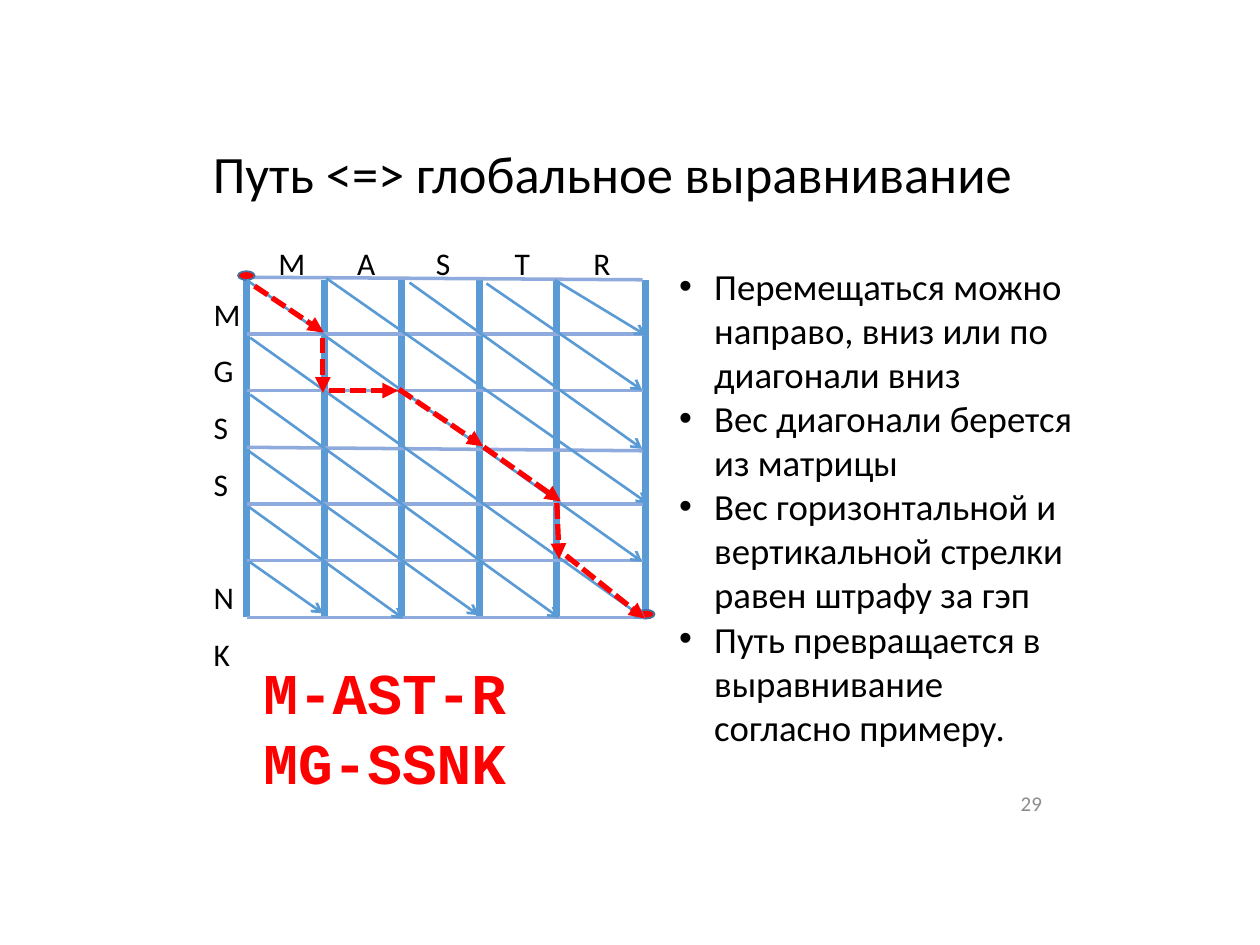
import pptx
import pptx.dml.color
import pptx.enum.dml
import pptx.enum.shapes
import pptx.enum.text
import pptx.oxml
import pptx.oxml.ns
import pptx.util

Pt = pptx.util.Pt
ALIGN = pptx.enum.text.PP_ALIGN
ANCHOR = pptx.enum.text.MSO_ANCHOR

BLACK, RED, BLUE, PALE_BLUE = "000000", "FF0000", "5B9BD5", "8FAADC"

TITLE = "Путь <=> глобальное выравнивание"
PAGE_NUMBER = "29"
COLUMN_LETTERS = ["M", "A", "S", "T", "R"]
ROW_LETTERS = ["M", "GS", "S", "N", "K"]
ALIGNMENT = ["M-AST-R", "MG-SSNK"]
RULES = [
    "Перемещаться можно направо, вниз или по диагонали вниз",
    "Вес диагонали берется из матрицы",
    "Вес горизонтальной и вертикальной стрелки равен штрафу за гэп",
    "Путь превращается в выравнивание согласно примеру.",
]

# Grid in points: five even columns, then a wider last one
LEFT, TOP, BOTTOM, RIGHT = 141, 158.4, 352.8, 367.2
COLUMN_STEP, ROW_STEP = 44.3, 32.4
COLUMNS = [LEFT + COLUMN_STEP * i for i in range(5)] + [368.6]
ROWS = [TOP + ROW_STEP * i for i in range(7)]
ROW_TILT = {0: 1.5, 3: 2}
LETTER_STEP = 45

# Arrows: x and y of the start, x and y of the end
DIAGONALS = [
    (141, 160, 367, 321),
    (143, 193, 369, 354),
    (143, 225.5, 319.5, 353),
    (142.5, 258, 273.5, 351.5),
    (234, 161.5, 367, 256.5),
    (142, 289.5, 230.5, 353.5),
    (278, 162, 367, 223),
    (317, 160, 369, 191.5),
    (142.5, 321, 184.5, 350.5),
    (186.5, 159, 370, 287.5),
]
PATH = [
    (145.5, 163.5, 185, 190),
    (184.5, 193, 184.5, 224.5),
    (188, 223.2, 227.5, 223.2),
    (228, 222.5, 276, 255),
    (276.5, 255.5, 320.5, 286.5),
    (318.2, 287.5, 319.5, 319.5),
    (323.5, 317.5, 368.5, 353.5),
]
ENDPOINTS = [(136, 155), (364.5, 348.5)]

deck = pptx.Presentation()
deck.slide_width, deck.slide_height = Pt(720), Pt(540)
slide = deck.slides.add_slide(deck.slide_layouts[6])
shapes = slide.shapes


def rgb(value):
    return pptx.dml.color.RGBColor.from_string(value)


def add_child(parent, tag, **attributes):
    child = pptx.oxml.parse_xml(f"<a:{tag} {pptx.oxml.ns.nsdecls('a')}/>")
    for key, value in attributes.items():
        child.set(key, str(value))
    parent.append(child)
    return child


def add_line(x1, y1, x2, y2, color, width, head=None, dashed=False):
    connector = shapes.add_connector(
        pptx.enum.shapes.MSO_CONNECTOR.STRAIGHT, Pt(x1), Pt(y1), Pt(x2), Pt(y2))
    connector.line.color.rgb = rgb(color)
    connector.line.width = Pt(width)
    if dashed:
        connector.line.dash_style = pptx.enum.dml.MSO_LINE.SQUARE_DOT
    if head:
        add_child(connector.line._get_or_add_ln(), "tailEnd", type=head)
    add_child(connector._element.spPr, "effectLst")


def add_text(box, lines, size, color=BLACK, font="Calibri", bold=False,
             align=ALIGN.LEFT, anchor=ANCHOR.TOP, spacing=None):
    """Add a text box with one paragraph a line; return its paragraphs."""
    frame = shapes.add_textbox(*map(Pt, box)).text_frame
    frame.word_wrap = True
    frame.vertical_anchor = anchor
    for i, line in enumerate(lines):
        paragraph = frame.add_paragraph() if i else frame.paragraphs[0]
        paragraph.alignment = align
        if spacing:
            paragraph.line_spacing = spacing
        run = paragraph.add_run()
        run.text = line
        run.font.name, run.font.size, run.font.bold = font, Pt(size), bold
        run.font.color.rgb = rgb(color)
    return frame.paragraphs


add_text((114.5, 79, 495, 44), [TITLE], 30, anchor=ANCHOR.MIDDLE, spacing=0.9)
add_text((476.5, 448, 126, 21.5), [PAGE_NUMBER], 12, "8C8C8C",
         align=ALIGN.RIGHT, anchor=ANCHOR.MIDDLE)

for x in COLUMNS:
    add_line(x, 160, x, BOTTOM, BLUE, 4)
for i, y in enumerate(ROWS):
    add_line(LEFT, y, RIGHT, y + ROW_TILT.get(i, 0), PALE_BLUE, 2)

for x, y in ENDPOINTS:
    dot = shapes.add_shape(
        pptx.enum.shapes.MSO_SHAPE.OVAL, Pt(x), Pt(y), Pt(9.5), Pt(5))
    dot.shadow.inherit = False
    dot.fill.solid()
    dot.fill.fore_color.rgb = rgb(RED)
    dot.line.color.rgb = rgb("43739E")
    dot.line.width = Pt(1)

header = add_text((152, 136, 210, 29), ["\t".join(COLUMN_LETTERS)], 18)[0]
tab_list = add_child(header._p.get_or_add_pPr(), "tabLst")
for i in range(1, len(COLUMN_LETTERS)):
    add_child(tab_list, "tab", pos=Pt(LETTER_STEP * i), algn="l")

row_labels = add_text((115, 154, 21.5, 204), ROW_LETTERS, 18, spacing=1.5)
row_labels[ROW_LETTERS.index("N")].space_before = Pt(ROW_STEP)

for diagonal in DIAGONALS:
    add_line(*diagonal, BLUE, 1.5, head="arrow")

for rule in add_text((381, 147, 242.5, 287), RULES, 21):
    properties = rule._p.get_or_add_pPr()
    properties.set("marL", str(Pt(20)))
    properties.set("indent", str(-Pt(20)))
    add_child(properties, "buFont", typeface="Arial")
    add_child(properties, "buChar", char="•")

for step in PATH:
    add_line(*step, RED, 3, head="triangle", dashed=True)

add_text((143.5, 372, 169, 87), ALIGNMENT, 33, RED, "Courier New", bold=True)

deck.save("out.pptx")
